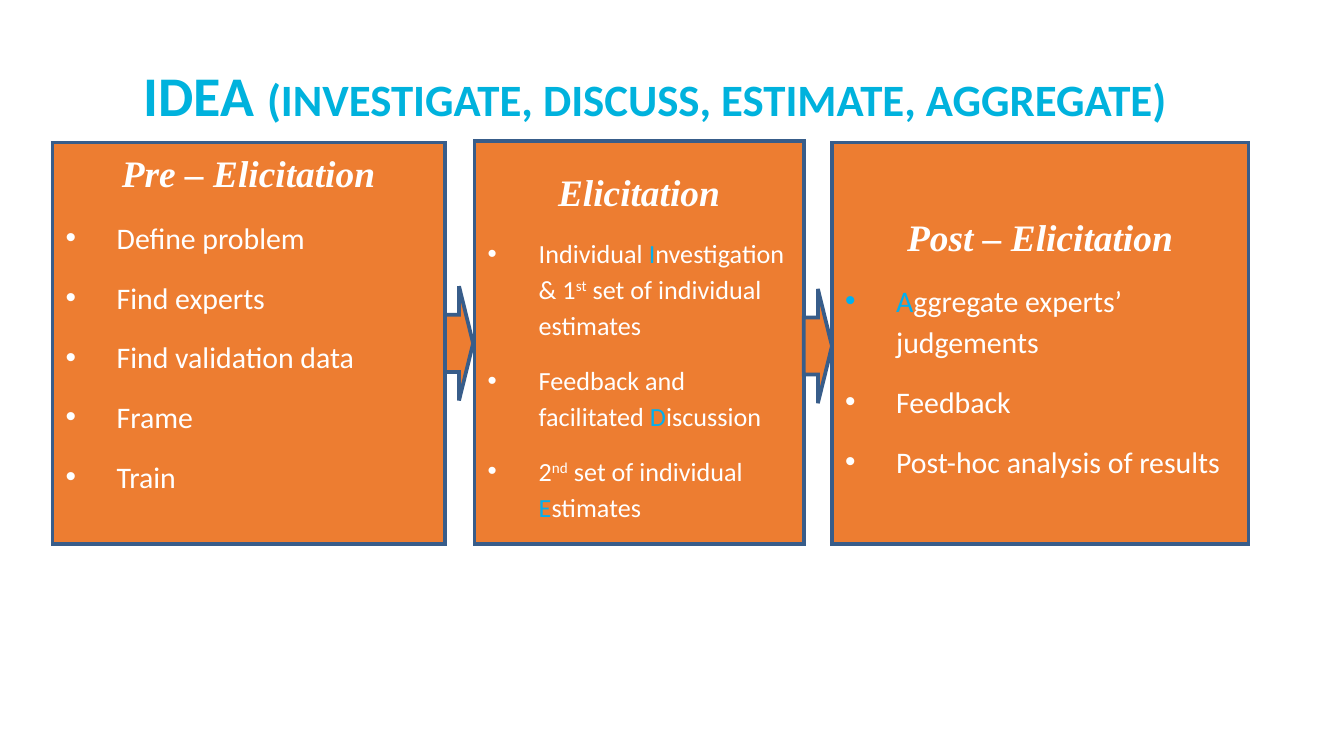
from lxml import etree
from pptx import Presentation
from pptx.dml.color import RGBColor
from pptx.enum.shapes import MSO_SHAPE as Shape
from pptx.enum.text import MSO_ANCHOR as Anchor, PP_ALIGN as Align
from pptx.oxml.ns import qn
from pptx.util import Inches, Pt

ORANGE = RGBColor(0xED, 0x7D, 0x31)
NAVY = RGBColor(0x38, 0x5D, 0x8A)
WHITE = RGBColor(0xFF, 0xFF, 0xFF)
TITLE_BLUE = RGBColor(0x00, 0xB2, 0xDD)
LETTER_BLUE = RGBColor(0x00, 0xB0, 0xF0)

LETTER, SUPERSCRIPT = "letter", "superscript"

# Each stage: left, top, width, height, bottom inset, bullet size, heading, bullets.
# A bullet is a list of runs; a run is plain text or (text, style).
STAGES = [
    (0.39, 1.06, 2.92, 2.99, 0.41, 16, "Pre – Elicitation", [
        ["Define problem"],
        ["Find experts"],
        ["Find validation data"],
        ["Frame"],
        ["Train"],
    ]),
    (3.53, 1.05, 2.45, 3, 0.05, 14, "Elicitation", [
        ["Individual ", ("I", LETTER), "nvestigation & 1", ("st", SUPERSCRIPT),
         " set of individual estimates"],
        ["Feedback and facilitated ", ("D", LETTER), "iscussion"],
        ["2", ("nd", SUPERSCRIPT), " set of individual ", ("E", LETTER), "stimates"],
    ]),
    (6.19, 1.06, 3.1, 2.99, 0.05, 16, "Post – Elicitation", [
        [("A", LETTER), "ggregate experts’ judgements"],
        ["Feedback"],
        ["Post-hoc analysis of results"],
    ]),
]
ARROWS = [(2.99, 2.45), (5.66, 2.47)]


def set_font(font, name, size, color, bold=False, italic=False):
    font.name = name
    font.size = Pt(size)
    font.bold = bold
    font.italic = italic
    font.color.rgb = color


def add_title(slide):
    box = slide.shapes.add_textbox(Inches(0.97), Inches(0.5), Inches(8.57), Inches(0.92))
    box.text_frame.word_wrap = True
    paragraph = box.text_frame.paragraphs[0]
    paragraph.line_spacing = 0.8
    for text, size in (("IDEA ", 30), ("(INVESTIGATE, DISCUSS, ESTIMATE, AGGREGATE)", 24)):
        run = paragraph.add_run()
        run.text = text
        set_font(run.font, "Calibri", size, TITLE_BLUE, bold=True)


def add_outlined_shape(slide, kind, left, top, width, height):
    shape = slide.shapes.add_shape(kind, Inches(left), Inches(top),
                                   Inches(width), Inches(height))
    shape.shadow.inherit = False
    shape.fill.solid()
    shape.fill.fore_color.rgb = ORANGE
    shape.line.color.rgb = NAVY
    shape.line.width = Pt(2)
    # Sharp corners
    outline = shape.element.spPr.find(qn("a:ln"))
    etree.SubElement(outline, qn("a:miter"), lim="800000")
    return shape


def add_bullet_mark(paragraph, color):
    properties = paragraph._p.get_or_add_pPr()
    properties.set("marL", str(Inches(0.38)))
    properties.set("indent", str(Inches(-0.38)))
    bullet_color = etree.SubElement(properties, qn("a:buClr"))
    etree.SubElement(bullet_color, qn("a:srgbClr"), val=str(color))
    etree.SubElement(properties, qn("a:buFont"), typeface="Arial")
    etree.SubElement(properties, qn("a:buChar"), char="•")


def add_bullet(text_frame, parts, size):
    runs = [(part, None) if isinstance(part, str) else part for part in parts]
    paragraph = text_frame.add_paragraph()
    paragraph.alignment = Align.LEFT
    paragraph.line_spacing = 1.15
    paragraph.space_after = Pt(10)
    add_bullet_mark(paragraph, LETTER_BLUE if runs[0][1] == LETTER else WHITE)
    set_font(paragraph.font, "Calibri", size, WHITE)
    for text, style in runs:
        run = paragraph.add_run()
        run.text = text
        if style == LETTER:
            run.font.color.rgb = LETTER_BLUE
        elif style == SUPERSCRIPT:
            run._r.get_or_add_rPr().set("baseline", "30000")


def add_stage(slide, left, top, width, height, bottom_inset, size, heading, bullets):
    shape = add_outlined_shape(slide, Shape.FLOWCHART_PROCESS, left, top, width, height)
    text_frame = shape.text_frame
    text_frame.word_wrap = True
    text_frame.vertical_anchor = Anchor.MIDDLE
    text_frame.margin_bottom = Inches(bottom_inset)
    paragraph = text_frame.paragraphs[0]
    paragraph.text = heading
    paragraph.alignment = Align.CENTER
    paragraph.line_spacing = 1.15
    paragraph.space_after = Pt(10)
    set_font(paragraph.font, "Times New Roman", 20, WHITE, bold=True, italic=True)
    for parts in bullets:
        add_bullet(text_frame, parts, size)


def add_arrow(slide, left, top):
    arrow = add_outlined_shape(slide, Shape.UP_ARROW, left, top, 0.85, 0.21)
    arrow.rotation = 90


def main():
    # Widescreen slide, 16:9
    presentation = Presentation()
    presentation.slide_width = Inches(10)
    presentation.slide_height = Inches(10 * 9 / 16)
    slide = presentation.slides.add_slide(presentation.slide_layouts[6])

    add_title(slide)

    # Stages and arrows, from back to front
    before, during, after = STAGES
    first_arrow, second_arrow = ARROWS
    add_stage(slide, *before)
    add_arrow(slide, *first_arrow)
    add_stage(slide, *during)
    add_stage(slide, *after)
    add_arrow(slide, *second_arrow)

    presentation.save("out.pptx")


if __name__ == "__main__":
    main()
